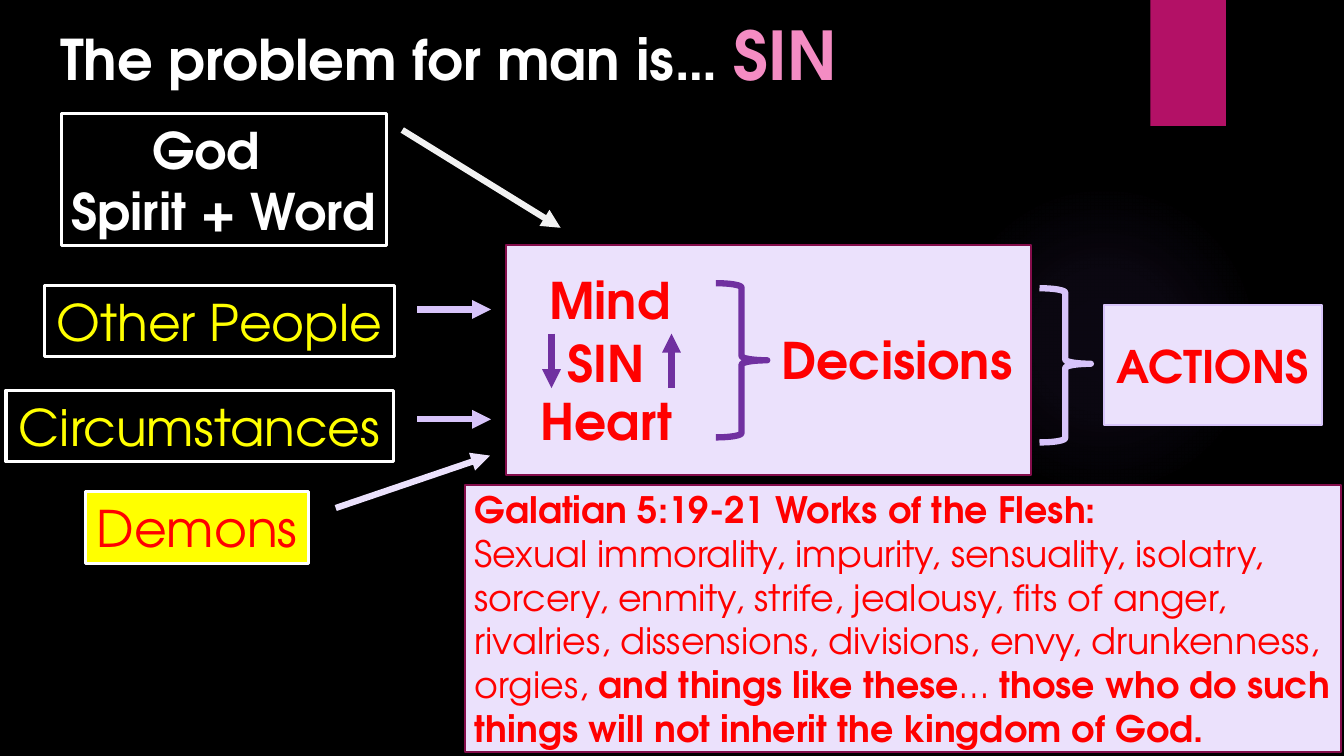
import dataclasses

import lxml.etree
import pptx
import pptx.dml.color
import pptx.enum.shapes
import pptx.enum.text
import pptx.oxml.ns
import pptx.util

Inches = pptx.util.Inches
Shape = pptx.enum.shapes.MSO_SHAPE
Anchor = pptx.enum.text.MSO_ANCHOR
Align = pptx.enum.text.PP_ALIGN
qn = pptx.oxml.ns.qn


@dataclasses.dataclass(frozen=True)
class Theme:
    font: str = "TeX Gyre Adventor"
    black: str = "000000"
    white: str = "FFFFFF"
    magenta: str = "B31166"
    pink: str = "F48CC3"
    plum: str = "840D4B"
    purple: str = "7030A0"
    lilac: str = "D7C4FA"
    pale: str = "EBE1FC"
    glow: str = "9B6BF2"
    off_white: str = "F2F2F2"
    red: str = "FF0000"
    yellow: str = "FFFF00"
    title: int = 40
    accent: int = 48
    label: int = 36
    action: int = 32
    verse: int = 26
    thin: float = 1.5
    frame: float = 2.25
    thick: float = 4.5


T = Theme()


def rgb(color):
    return pptx.dml.color.RGBColor.from_string(color)


def draw(s, kind, box, fill=None, line=None, width=T.thin):
    sp = s.shapes.add_shape(kind, *map(Inches, box))
    sp.shadow.inherit = False
    if fill:
        sp.fill.solid()
        sp.fill.fore_color.rgb = rgb(fill)
    else:
        sp.fill.background()
    if line:
        sp.line.color.rgb = rgb(line)
        sp.line.width = pptx.util.Pt(width)
    else:
        sp.line.fill.background()
    return sp


def write(sp, paragraphs, align=Align.LEFT, **frame):
    tf = sp.text_frame
    for name, value in {"word_wrap": True, "vertical_anchor": Anchor.MIDDLE, **frame}.items():
        setattr(tf, name, value)
    for i, runs in enumerate(paragraphs):
        p = tf.paragraphs[0] if i == 0 else tf.add_paragraph()
        p.alignment = align
        for text, size, color, bold in runs:
            r = p.add_run()
            r.text = text
            font = {"name": T.font, "size": pptx.util.Pt(size), "bold": bold}
            for name, value in font.items():
                setattr(r.font, name, value)
            r.font.color.rgb = rgb(color)
    return tf


def arrow(s, start, end, color):
    c = s.shapes.add_connector(
        pptx.enum.shapes.MSO_CONNECTOR.STRAIGHT, *map(Inches, start + end))
    c.line.color.rgb = rgb(color)
    c.line.width = pptx.util.Pt(T.thick)
    lxml.etree.SubElement(c.line._get_or_add_ln(), qn("a:tailEnd"), type="triangle")
    lxml.etree.SubElement(c._element.spPr, qn("a:effectLst"))


def backdrop(s, box):
    left, top, width, height = box
    s.background.fill.solid()
    s.background.fill.fore_color.rgb = rgb(T.black)
    glow = draw(s, Shape.OVAL, (left + 9.41, top + 1.83, 3.08, 3.08))
    glow.fill.gradient()
    grad = glow._element.spPr.find(qn("a:gradFill"))
    for child in list(grad):
        grad.remove(child)
    stops = lxml.etree.SubElement(grad, qn("a:gsLst"))
    for pos, alpha in ((0, 7), (36, 6), (69, 0)):
        stop = lxml.etree.SubElement(stops, qn("a:gs"), pos=str(pos * 1000))
        color = lxml.etree.SubElement(stop, qn("a:srgbClr"), val=T.glow)
        lxml.etree.SubElement(color, qn("a:alpha"), val=str(alpha * 1000))
    radial = lxml.etree.SubElement(grad, qn("a:path"), path="circle")
    lxml.etree.SubElement(radial, qn("a:fillToRect"),
                          {side: "50000" for side in "ltrb"})
    draw(s, Shape.RECTANGLE, (left + 11.41, top, 0.75, 1.25), T.magenta)


def title(s, box):
    sp = s.shapes.add_textbox(*map(Inches, box))
    write(sp, [[("The problem for man is… ", T.title, T.white, True),
                ("SIN", T.accent, T.pink, True)]])


def influences(s, box):
    left, top, width, height = box
    god = draw(s, Shape.RECTANGLE, (left + 0.55, top, 3.22, 1.31), line=T.white, width=T.frame)
    tf = write(god, [[("God", T.label, T.white, True)],
                     [("Spirit + Word", T.label, T.white, True)]], word_wrap=False)
    tf.paragraphs[0]._p.get_or_add_pPr().set("marL", str(Inches(0.8)))
    labels = (
        ("Other People", 0.38, 1.7, 3.47, None, T.yellow),
        ("Circumstances", 0, 2.74, 3.84, None, T.yellow),
        ("Demons", 0.79, 3.75, 2.21, T.yellow, T.red),
    )
    for text, dx, dy, w, fill, color in labels:
        sp = draw(s, Shape.RECTANGLE, (left + dx, top + dy, w, 0.71), fill, T.white, T.frame)
        write(sp, [[(text, T.label, color, False)]], Align.CENTER, word_wrap=False)
    arrows = (
        (3.93, 0.16, 5.5, 1.13, T.off_white),
        (4.08, 1.94, 4.81, 1.94, T.lilac),
        (4.08, 3.03, 4.81, 3.03, T.lilac),
        (3.27, 3.91, 4.8, 3.39, T.pale),
    )
    for x1, y1, x2, y2, color in arrows:
        arrow(s, (left + x1, top + y1), (left + x2, top + y2), color)


def brace(s, box, color, middle=0.5):
    sp = draw(s, Shape.RIGHT_BRACE, box, line=color, width=T.thick)
    sp.adjustments[0] = 0.083
    sp.adjustments[1] = middle


def inner_man(s, box):
    left, top, width, height = box
    draw(s, Shape.RECTANGLE, box, T.pale, T.plum)
    pitch = 0.6
    middle = top + height / 2
    words = (("Mind", 0.43, -1, 1.6), ("SIN", 0.61, 0.04, 1),
             ("Heart", 0.34, 1, 1.6), ("Decisions", 2.73, 0, 2.45))
    for text, dx, row, w in words:
        y = middle + row * pitch - pitch / 2
        sp = s.shapes.add_textbox(*map(Inches, (left + dx, y, w, pitch)))
        write(sp, [[(text, T.label, T.red, True)]], margin_left=0, margin_right=0,
              margin_top=0, margin_bottom=0)
    brace(s, (left + 2.08, top + 0.38, 0.51, 1.53), T.purple)
    high, low = top + 0.88, top + 1.42
    arrow(s, (left + 0.45, high), (left + 0.45, low), T.purple)
    arrow(s, (left + 1.64, low), (left + 1.64, high), T.purple)


def actions(s, box):
    left, top, width, height = box
    brace(s, (left, top, 0.51, height), T.lilac, 0.49)
    sp = draw(s, Shape.RECTANGLE, (left + 0.64, top + 0.17, width - 0.64, 1.19),
              T.pale, T.lilac)
    write(sp, [[("ACTIONS", T.action, T.red, True)]], Align.CENTER)


def scripture(s, box):
    verse = (
        ("Sexual immorality, impurity, sensuality, isolatry, sorcery, enmity, strife, "
         "jealousy, fits of anger, rivalries, dissensions, divisions, envy, "
         "drunkenness, orgies, ", False),
        ("and things like these", True),
        ("… ", False),
        ("those who do such things will not inherit the kingdom of God.", True),
    )
    sp = draw(s, Shape.RECTANGLE, box, T.pale, T.plum)
    write(sp, [[("Galatian 5:19-21 Works of the Flesh:", T.verse, T.red, True)],
               [(text, T.verse, T.red, bold) for text, bold in verse]])


def main():
    prs = pptx.Presentation()
    prs.slide_width, prs.slide_height = Inches(13.33), Inches(7.5)
    s = prs.slides.add_slide(prs.slide_layouts[6])
    backdrop(s, (0, 0, 13.33, 7.5))
    title(s, (0.5, 0.08, 8.13, 0.91))
    inner_man(s, (5.02, 2.43, 5.21, 2.28))
    actions(s, (10.31, 2.86, 2.8, 1.53))
    scripture(s, (4.61, 4.81, 8.69, 2.65))
    influences(s, (0.06, 1.13, 4.81, 4.46))
    prs.save("out.pptx")


if __name__ == "__main__":
    main()
